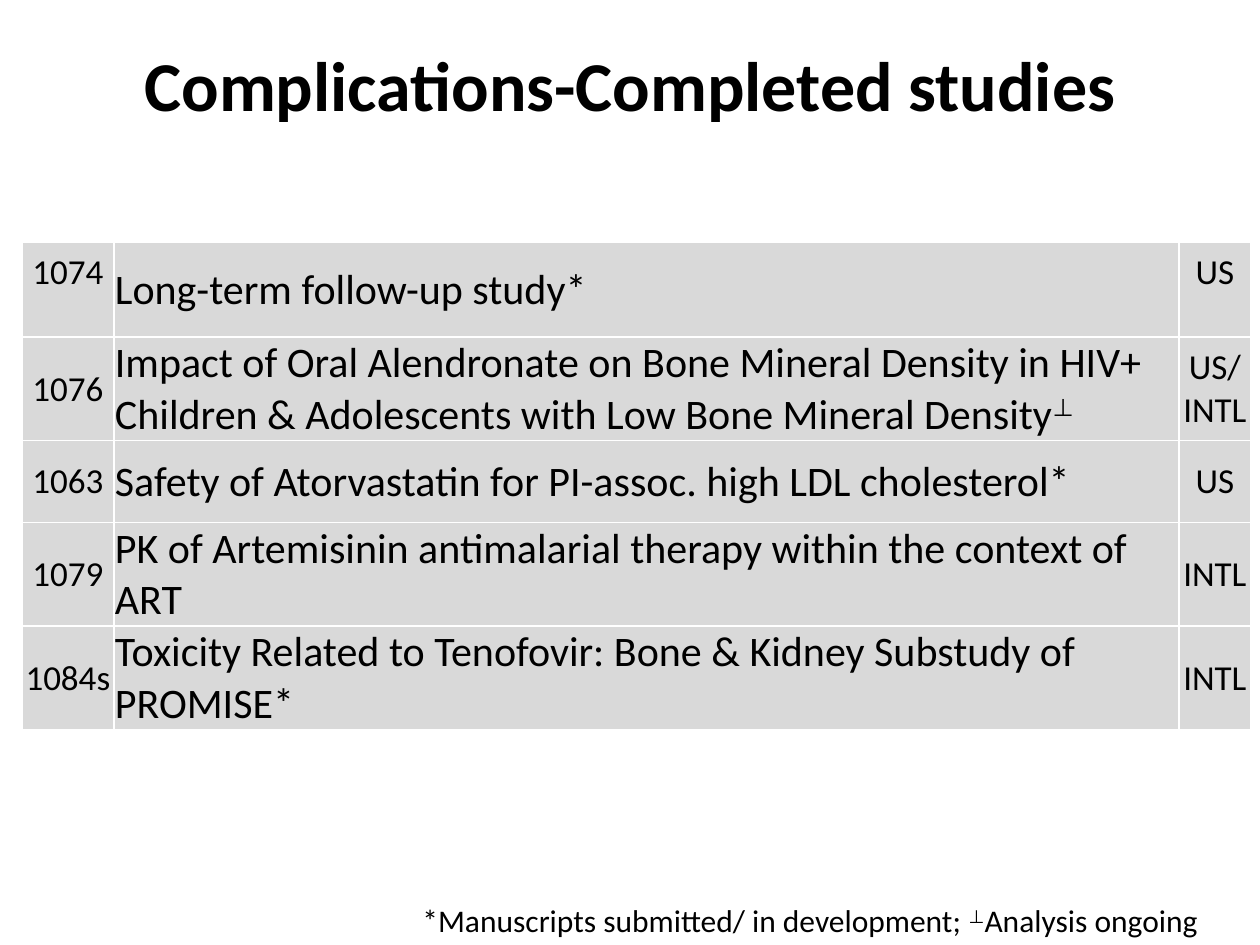
"""Build the slide that lists the completed complications studies."""
from lxml.etree import SubElement
from pptx import Presentation
from pptx.dml.color import RGBColor
from pptx.enum.text import MSO_ANCHOR, PP_ALIGN
from pptx.oxml.ns import qn
from pptx.util import Pt

PX = 914400 / 126
BLACK = RGBColor(0, 0, 0)
GREY = RGBColor(0xD9, 0xD9, 0xD9)
WHITE = RGBColor(255, 255, 255)
MARK = "⊥"


def px(*nums):
    return [round(n * PX) for n in nums]


def write(frame, text, size=20, bold=False, align=PP_ALIGN.LEFT):
    frame.word_wrap = True
    for i, line in enumerate(text.split("\n")):
        para = frame.add_paragraph() if i else frame.paragraphs[0]
        para.alignment = align
        for part in filter(None, line.partition(MARK)):
            run = para.add_run()
            run.text = part
            font = run.font
            font.name, font.size, font.bold = "Calibri", Pt(size), bold
            font.color.rgb = BLACK
            if part == MARK:
                run._r.get_or_add_rPr().set("baseline", "30000")


deck = Presentation()
deck.slide_width, deck.slide_height = px(1260, 945)
slide = deck.slides.add_slide(deck.slide_layouts[5])

title = slide.shapes.title
title.left, title.top, title.width, title.height = px(63, 21, 1134, 126)
title.text_frame.vertical_anchor = MSO_ANCHOR.MIDDLE
write(title.text_frame, "Complications-Completed studies", size=40,
      bold=True, align=PP_ALIGN.CENTER)

studies = [
    ("1074", "Long-term follow-up study*", "US"),
    ("1076", "Impact of Oral Alendronate on Bone Mineral Density in HIV+ "
     "Children & Adolescents with Low Bone Mineral Density⊥", "US/\nINTL"),
    ("1063", "Safety of Atorvastatin for PI-assoc. high LDL cholesterol*", "US"),
    ("1079", "PK of Artemisinin antimalarial therapy within the context of ART",
     "INTL"),
    ("1084s", "Toxicity Related to Tenofovir: Bone & Kidney Substudy of PROMISE*",
     "INTL"),
]
widths = px(92, 1065, 72)
heights = px(95, 82, 82, 96, 82)
table = slide.shapes.add_table(len(studies), len(widths), *px(22, 242),
                               sum(widths), sum(heights)).table
table.first_row = table.horz_banding = False
for col, width in zip(table.columns, widths):
    col.width = width
for row, height in zip(table.rows, heights):
    row.height = height

for r, study in enumerate(studies):
    for c, text in enumerate(study):
        cell = table.cell(r, c)
        centred = c != 1
        cell.vertical_anchor = MSO_ANCHOR.MIDDLE
        low = 34 if r == 0 and centred else 0
        (cell.margin_left, cell.margin_right,
         cell.margin_top, cell.margin_bottom) = px(1, 1, 1, low)
        write(cell.text_frame, text, size=20 if centred else 24,
              align=PP_ALIGN.CENTER if centred else PP_ALIGN.LEFT)
        props = cell._tc.get_or_add_tcPr()
        for side in ("lnL", "lnR", "lnT", "lnB"):
            edge = SubElement(props, qn(f"a:{side}"), w=str(Pt(1)))
            fill = SubElement(edge, qn("a:solidFill"))
            SubElement(fill, qn("a:srgbClr"), val=str(WHITE))
        cell.fill.solid()
        cell.fill.fore_color.rgb = GREY

note = slide.shapes.add_textbox(*px(410, 895, 828, 50))
write(note.text_frame,
      "*Manuscripts submitted/ in development; ⊥Analysis ongoing", size=18)

deck.save("out.pptx")
